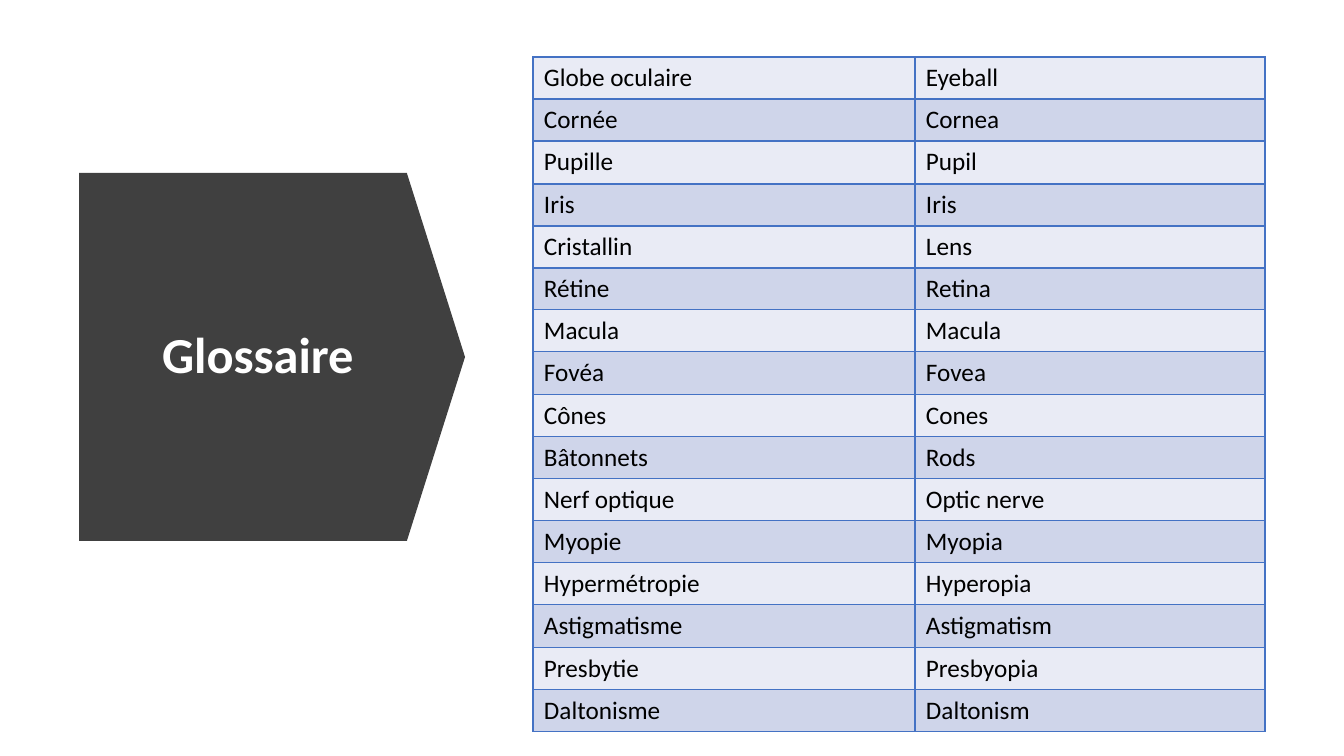
from typing import NamedTuple

from lxml.etree import SubElement
from pptx import Presentation
from pptx.dml.color import RGBColor
from pptx.enum.shapes import MSO_SHAPE
from pptx.enum.text import MSO_ANCHOR, PP_ALIGN
from pptx.oxml.ns import qn
from pptx.slide import Slide
from pptx.table import _Cell
from pptx.text.text import _Paragraph
from pptx.util import Emu, Pt

EMU_PER_PX = 914400 / 100.8

CHARCOAL = RGBColor(0x40, 0x40, 0x40)
WHITE = RGBColor(0xFF, 0xFF, 0xFF)
BLACK = RGBColor(0x00, 0x00, 0x00)
BORDER_BLUE = RGBColor(0x44, 0x72, 0xC4)
BANDS = (RGBColor(0xE9, 0xEB, 0xF5), RGBColor(0xCF, 0xD5, 0xEA))


class Box(NamedTuple):
    left: int
    top: int
    width: int
    height: int


class Term(NamedTuple):
    french: str
    english: str


ARROW_BOX = Box(88, 164, 368, 386)
TITLE_BOX = Box(113, 217, 290, 281)
GLOSSARY_BOX = Box(533, 57, 732, 675)
COLUMN_WIDTHS = (382, 350)

TERMS = (
    Term("Globe oculaire", "Eyeball"),
    Term("Cornée", "Cornea"),
    Term("Pupille", "Pupil"),
    Term("Iris", "Iris"),
    Term("Cristallin", "Lens"),
    Term("Rétine", "Retina"),
    Term("Macula", "Macula"),
    Term("Fovéa", "Fovea"),
    Term("Cônes", "Cones"),
    Term("Bâtonnets", "Rods"),
    Term("Nerf optique", "Optic nerve"),
    Term("Myopie", "Myopia"),
    Term("Hypermétropie", "Hyperopia"),
    Term("Astigmatisme", "Astigmatism"),
    Term("Presbytie", "Presbyopia"),
    Term("Daltonisme", "Daltonism"),
)


def px(length: int) -> Emu:
    return Emu(round(length * EMU_PER_PX))


def place(box: Box) -> list[Emu]:
    return [px(length) for length in box]


def write(paragraph: _Paragraph, text: str, size: int, color: RGBColor, bold: bool = False) -> None:
    paragraph.text = text
    for run in paragraph.runs:
        run.font.name = "Calibri"
        run.font.size = Pt(size)
        run.font.bold = bold
        run.font.color.rgb = color


def add_arrow(slide: Slide) -> None:
    arrow = slide.shapes.add_shape(MSO_SHAPE.DOWN_ARROW, *place(ARROW_BOX))
    arrow.rotation = 270
    arrow.adjustments[0] = 1
    arrow.adjustments[1] = 0.158
    arrow.shadow.inherit = False
    arrow.fill.solid()
    arrow.fill.fore_color.rgb = CHARCOAL
    arrow.line.fill.background()


def add_title(slide: Slide) -> None:
    frame = slide.shapes.add_textbox(*place(TITLE_BOX)).text_frame
    frame.word_wrap = True
    frame.vertical_anchor = MSO_ANCHOR.MIDDLE
    heading = frame.paragraphs[0]
    write(heading, "Glossaire", 36, WHITE, bold=True)
    heading.alignment = PP_ALIGN.CENTER
    heading.line_spacing = 0.9


def add_borders(cell: _Cell) -> None:
    properties = cell._tc.get_or_add_tcPr()
    # Borders come before the fill in the cell properties
    for side in ("a:lnL", "a:lnR", "a:lnT", "a:lnB"):
        border = SubElement(properties, qn(side), w=str(Pt(1)))
        fill = SubElement(border, qn("a:solidFill"))
        SubElement(fill, qn("a:srgbClr"), val=str(BORDER_BLUE))


def fill_cell(cell: _Cell, text: str, band: RGBColor) -> None:
    cell.margin_left = cell.margin_right = px(11)
    cell.margin_top = px(6)
    cell.margin_bottom = px(5)
    write(cell.text_frame.paragraphs[0], text, 18, BLACK)
    add_borders(cell)
    cell.fill.solid()
    cell.fill.fore_color.rgb = band


def add_glossary(slide: Slide) -> None:
    count = len(TERMS)
    glossary = slide.shapes.add_table(count, len(COLUMN_WIDTHS), *place(GLOSSARY_BOX)).table
    glossary.first_row = False
    glossary.horz_banding = False
    for column, width in zip(glossary.columns, COLUMN_WIDTHS):
        column.width = px(width)
    # Row edges share the height evenly, on whole px
    edges = [round(i * GLOSSARY_BOX.height / count) for i in range(count + 1)]
    for i, term in enumerate(TERMS):
        glossary.rows[i].height = px(edges[i + 1] - edges[i])
        for j, word in enumerate(term):
            fill_cell(glossary.cell(i, j), word, BANDS[i % 2])


def main() -> None:
    presentation = Presentation()
    presentation.slide_width = px(1344)
    presentation.slide_height = px(756)
    slide = presentation.slides.add_slide(presentation.slide_layouts[6])

    # Title on its arrow
    add_arrow(slide)
    add_title(slide)

    # French and English terms
    add_glossary(slide)

    presentation.save("out.pptx")


if __name__ == "__main__":
    main()
